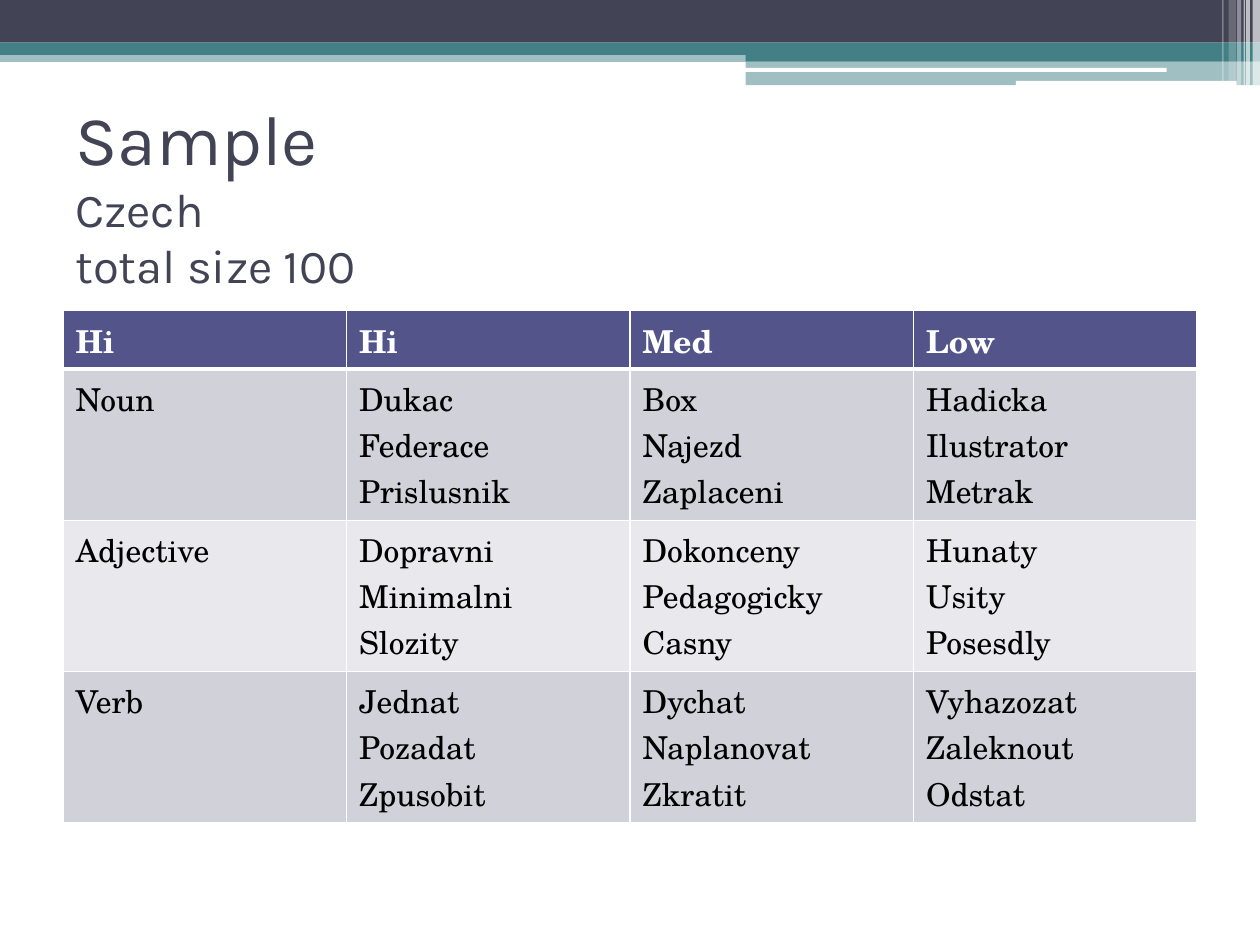
from lxml import etree
from pptx import Presentation
from pptx.dml.color import RGBColor
from pptx.enum import shapes, text
from pptx.oxml import ns
from pptx.util import Cm, Pt

WHITE = RGBColor(0xFF, 0xFF, 0xFF)
BLACK = RGBColor(0, 0, 0)
SLATE = RGBColor(0x42, 0x44, 0x56)
TEAL = RGBColor(0x43, 0x80, 0x86)
INDIGO = RGBColor(0x53, 0x54, 0x8A)
BAND_DARK = RGBColor(0xD1, 0xD1, 0xDA)
BAND_LIGHT = RGBColor(0xE9, 0xE9, 0xED)


def add_bar(x, y, w, h, color, alpha=100, kind=shapes.MSO_SHAPE.RECTANGLE):
    """Add a borderless bar; lengths in cm, alpha is opacity in percent."""
    sp = s.shapes.add_shape(kind, Cm(x), Cm(y), Cm(w), Cm(h))
    sp.shadow.inherit = False
    sp.line.fill.background()
    sp.fill.solid()
    sp.fill.fore_color.rgb = color
    if alpha < 100:
        clr = sp._element.spPr.find(ns.qn("a:solidFill"))[0]
        etree.SubElement(clr, ns.qn("a:alpha"), val=str(alpha * 1000))
    return sp


def add_border(cell, side, width):
    """Add a white border; side is L, R, T or B, width in points."""
    ln = etree.SubElement(cell._tc.get_or_add_tcPr(), ns.qn(f"a:ln{side}"), w=str(Pt(width)))
    fill = etree.SubElement(ln, ns.qn("a:solidFill"))
    etree.SubElement(fill, ns.qn("a:srgbClr"), val=str(WHITE))


prs = Presentation()
prs.slide_width, prs.slide_height = Cm(25.4), Cm(19.05)
s = prs.slides.add_slide(prs.slide_layouts[6])

# Header bands
add_bar(0, 1.02, 25.4, 0.23, TEAL, 50)
add_bar(0, 0, 25.4, 0.86, SLATE)
add_bar(0, 0.86, 25.4, 0.25, TEAL)
add_bar(15.03, 1, 10.37, 0.23, TEAL)
add_bar(15.03, 1.23, 10.37, 0.49, TEAL, 50)
for x, y, w, h in [(15.02, 1.37, 8.5, 0.08), (20.48, 1.63, 4.45, 0.1)]:
    add_bar(x, y, w, h, WHITE, kind=shapes.MSO_SHAPE.ROUNDED_RECTANGLE)

# Translucent stripes at the right edge: left, width, height, opacity
for x, w, h, alpha in [
    (25.25, 0.15, 1.73, 65),
    (25.12, 0.08, 1.73, 65),
    (25.07, 0.03, 1.73, 60),
    (24.94, 0.08, 1.73, 40),
    (24.77, 0.15, 1.63, 20),
    (24.64, 0.03, 1.63, 30),
]:
    add_bar(x, 0, w, h, WHITE, alpha)

# Title
tf = s.shapes.add_textbox(Cm(1.27), Cm(1.7), Cm(22.86), Cm(4.45)).text_frame
tf.word_wrap = True
tf.vertical_anchor = text.MSO_ANCHOR.MIDDLE
p = tf.paragraphs[0]
p.text = "Sample\vCzech\vtotal size 100"
for r, size in zip(p.runs, (40, 27, 27)):
    r.font.name = "Karla"
    r.font.size = Pt(size)
    r.font.color.rgb = SLATE

# Word table
rows = [
    ["Hi", "Hi", "Med", "Low"],
    ["Noun", "Dukac\nFederace\nPrislusnik", "Box\nNajezd\nZaplaceni",
     "Hadicka\nIlustrator\nMetrak"],
    ["Adjective", "Dopravni\nMinimalni\nSlozity", "Dokonceny\nPedagogicky\nCasny",
     "Hunaty\nUsity\nPosesdly"],
    ["Verb", "Jednat\nPozadat\nZpusobit", "Dychat\nNaplanovat\nZkratit",
     "Vyhazozat\nZaleknout\nOdstat"],
]
fills = [INDIGO, BAND_DARK, BAND_LIGHT, BAND_DARK]
table = s.shapes.add_table(4, 4, Cm(1.27), Cm(6.25), Cm(22.86), Cm(10.34)).table
for i, row in enumerate(rows):
    header = i == 0
    table.rows[i].height = Cm(1.19 if header else 3.05)
    for j, words in enumerate(row):
        cell = table.cell(i, j)
        for side in "LRTB":
            thick = (header and side == "B") or (i == 1 and side == "T")
            add_border(cell, side, 3 if thick else 1)
        cell.fill.solid()
        cell.fill.fore_color.rgb = fills[i]
        cell.text_frame.text = words
        for p in cell.text_frame.paragraphs:
            font = p.runs[0].font
            font.name = "TeX Gyre Schola"
            font.size = Pt(18)
            font.bold = header
            font.color.rgb = WHITE if header else BLACK

prs.save("out.pptx")
